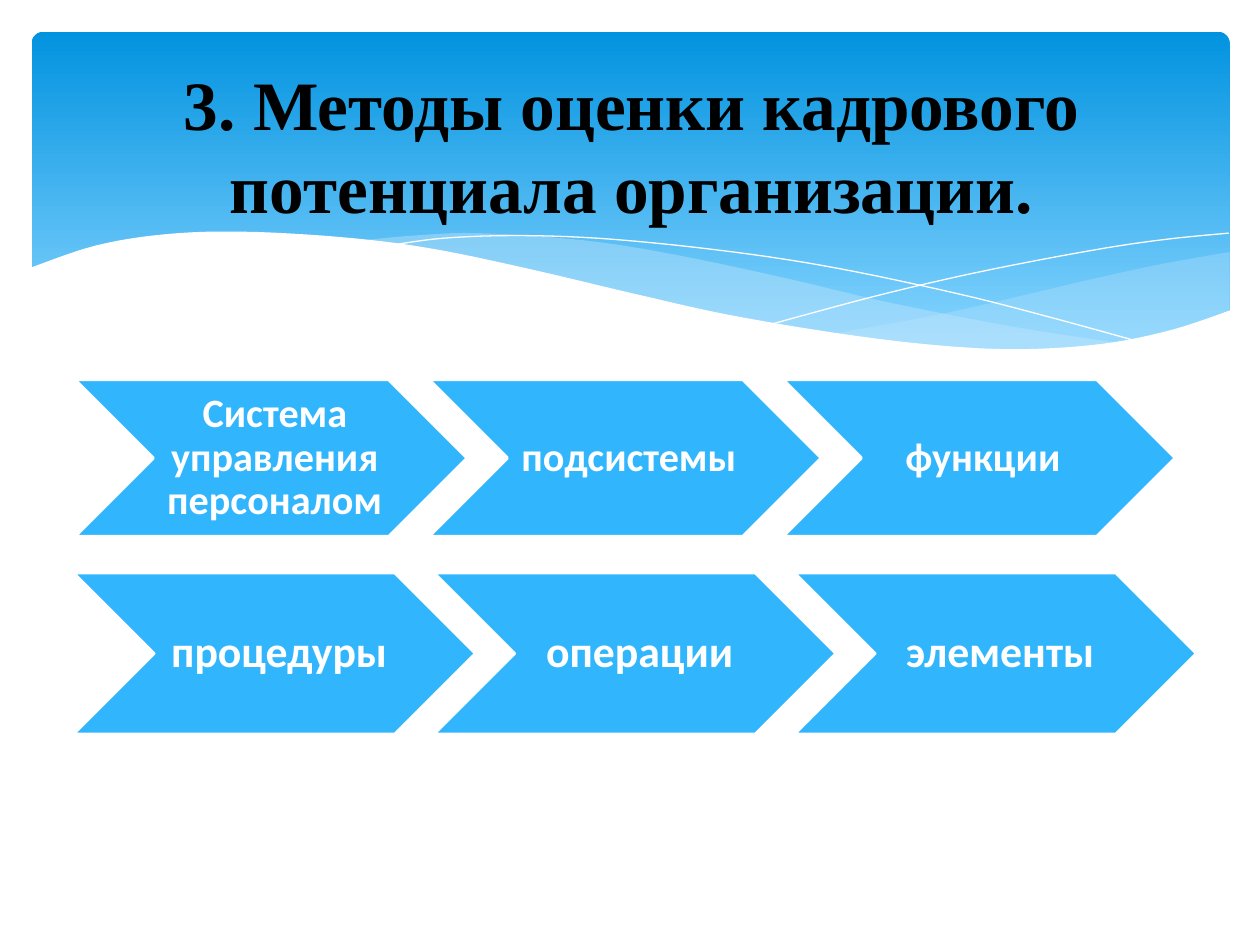
from dataclasses import dataclass

from lxml.etree import SubElement
from pptx import Presentation
from pptx.dml.color import RGBColor
from pptx.enum.shapes import MSO_SHAPE
from pptx.enum.text import MSO_ANCHOR, PP_ALIGN
from pptx.oxml.ns import qn
from pptx.util import Cm, Pt


@dataclass(frozen=True)
class Theme:
    sky_top: RGBColor = RGBColor.from_string("0293E0")
    sky_bottom: RGBColor = RGBColor.from_string("83D3FE")
    wave: RGBColor = RGBColor.from_string("C6E7FC")
    chevron: RGBColor = RGBColor.from_string("31B6FD")
    white: RGBColor = RGBColor.from_string("FFFFFF")
    black: RGBColor = RGBColor.from_string("000000")
    title_font: str = "Times New Roman"
    body_font: str = "Calibri"
    title_size: float = 39.6
    first_row_size: float = 23
    second_row_size: float = 25


@dataclass(frozen=True)
class Box:
    """Lengths in centimetres."""
    left: float
    top: float
    width: float
    height: float

    def emu(self):
        return Cm(self.left), Cm(self.top), Cm(self.width), Cm(self.height)


THEME = Theme()

# Key points of the header waves, in cm from the header's top left corner
RIGHT_CREST = [(24.15, 4.44), (22.75, 4.69), (21.23, 5.02), (18.49, 5.66), (16.15, 6.09)]
RIGHT_TROUGH = [(16.15, 6.09), (17.95, 6.32), (19.76, 6.42), (21.51, 6.32),
                (22.93, 6.04), (24.15, 5.63)]
MIDDLE_CREST = [(22.04, 6.29), (19.86, 5.96), (17.29, 5.46), (15.34, 5.0), (13.1, 4.52),
                (11.17, 4.21), (9.01, 4.06), (7.69, 4.11), (6.62, 4.21)]
MIDDLE_TROUGH = [(6.62, 4.21), (8.55, 4.52), (10.76, 5.0), (13.74, 5.66), (15.87, 6.07),
                 (17.7, 6.32), (19.58, 6.42), (20.9, 6.4), (22.04, 6.29)]
FALLING_LINE = [(7.21, 4.31), (8.33, 4.16), (9.93, 4.11), (11.78, 4.19), (14.14, 4.44),
                (16.25, 4.77), (18.66, 5.28), (20.47, 5.74), (22.4, 6.27)]
RISING_LINE = [(14.93, 5.89), (17.01, 5.33), (19.07, 4.85), (21.36, 4.41), (22.83, 4.19),
               (24.13, 4.06)]
PAPER_EDGE = [(24.18, 5.61), (22.98, 6.01), (21.59, 6.29), (19.91, 6.4), (18.26, 6.32),
              (16.33, 6.09), (14.07, 5.71), (12.14, 5.28), (9.98, 4.77), (8.0, 4.36),
              (6.24, 4.14), (4.26, 4.03), (2.71, 4.08), (1.29, 4.31), (-0.06, 4.77)]
PAPER_BASE = [(-0.06, 7.72), (24.18, 7.72)]


def smooth(points, steps=6):
    """Run a Catmull-Rom curve through the points."""
    padded = [points[0], *points, points[-1]]
    curve = [points[0]]
    for a, b, c, d in zip(padded, padded[1:], padded[2:], padded[3:]):
        for step in range(1, steps + 1):
            t = step / steps
            curve.append(tuple(
                (2 * q + (r - p) * t + (2 * p - 5 * q + 4 * r - s) * t ** 2
                 + (3 * q - p - 3 * r + s) * t ** 3) / 2
                for p, q, r, s in zip(a, b, c, d)))
    return curve


def add_outline(slide, box, points, closed):
    (start_x, start_y), *rest = [(Cm(x), Cm(y)) for x, y in points]
    builder = slide.shapes.build_freeform(start_x, start_y)
    builder.add_line_segments(rest, close=closed)
    outline = builder.convert_to_shape(Cm(box.left), Cm(box.top))
    outline.shadow.inherit = False
    return outline


def add_wave(slide, box, points, color, opacity=100):
    wave = add_outline(slide, box, points, closed=True)
    wave.line.fill.background()
    wave.fill.solid()
    wave.fill.fore_color.rgb = color
    if opacity < 100:
        rgb = wave.fill._xPr.find(".//" + qn("a:srgbClr"))
        SubElement(rgb, qn("a:alpha")).set("val", str(opacity * 1000))


def add_hairline(slide, box, points):
    hairline = add_outline(slide, box, points, closed=False)
    hairline.fill.background()
    hairline.line.color.rgb = THEME.white
    hairline.line.width = Pt(0)


def add_header(slide, box):
    sky = slide.shapes.add_shape(MSO_SHAPE.ROUNDED_RECTANGLE, *box.emu())
    sky.adjustments[0] = 0.034
    sky.shadow.inherit = False
    sky.line.fill.background()
    sky.fill.gradient()
    sky.fill.gradient_angle = 270
    first, last = sky.fill.gradient_stops
    first.color.rgb, first.position = THEME.sky_top, 0
    last.color.rgb, last.position = THEME.sky_bottom, 0.9

    add_wave(slide, box, smooth(RIGHT_CREST) + smooth(RIGHT_TROUGH), THEME.wave, 29)
    add_wave(slide, box, smooth(MIDDLE_CREST) + smooth(MIDDLE_TROUGH), THEME.wave, 40)
    for line in (FALLING_LINE, RISING_LINE):
        add_hairline(slide, box, smooth(line))
    add_wave(slide, box, smooth(PAPER_EDGE) + PAPER_BASE, THEME.white)


def write(frame, text, font, size, color):
    frame.word_wrap = True
    frame.vertical_anchor = MSO_ANCHOR.MIDDLE
    paragraph = frame.paragraphs[0]
    paragraph.alignment = PP_ALIGN.CENTER
    run = paragraph.add_run()
    run.text = text
    run.font.name = font
    run.font.size = Pt(size)
    run.font.bold = True
    run.font.color.rgb = color
    return paragraph


def add_title(slide, box, text):
    title = slide.shapes.add_textbox(*box.emu())
    write(title.text_frame, text, THEME.title_font, THEME.title_size, THEME.black)


def add_chevron_row(slide, box, labels, size, border, padding):
    """Chevrons 2.5 times as wide as high, spread evenly over the box."""
    width = box.height * 2.5
    pitch = (box.width - width) / (len(labels) - 1)
    for index, label in enumerate(labels):
        place = Box(box.left + index * pitch, box.top, width, box.height)
        chevron = slide.shapes.add_shape(MSO_SHAPE.CHEVRON, *place.emu())
        chevron.shadow.inherit = False
        chevron.fill.solid()
        chevron.fill.fore_color.rgb = THEME.chevron
        chevron.line.color.rgb = THEME.white
        chevron.line.width = Pt(border)
        frame = chevron.text_frame
        frame.margin_left = Cm(3 * padding)
        frame.margin_right = frame.margin_top = frame.margin_bottom = Cm(padding)
        paragraph = write(frame, label, THEME.body_font, size, THEME.white)
        paragraph.line_spacing = 0.9


def main():
    deck = Presentation()
    deck.slide_width, deck.slide_height = Cm(25.4), Cm(19.05)
    slide = deck.slides.add_slide(deck.slide_layouts[6])

    add_header(slide, Box(0.64, 0.64, 24.15, 6.86))
    add_title(slide, Box(1.3, 1.17, 22.86, 3.48),
              "3. Методы оценки кадрового потенциала организации.")
    add_chevron_row(slide, Box(1.5, 7.65, 22.2, 3.17),
                    ["Система управления персоналом", "подсистемы", "функции"],
                    THEME.first_row_size, border=2, padding=0.08)
    add_chevron_row(slide, Box(1.5, 11.56, 22.61, 3.23),
                    ["процедуры", "операции", "элементы"],
                    THEME.second_row_size, border=1.25, padding=0.09)
    deck.save("out.pptx")


if __name__ == "__main__":
    main()
